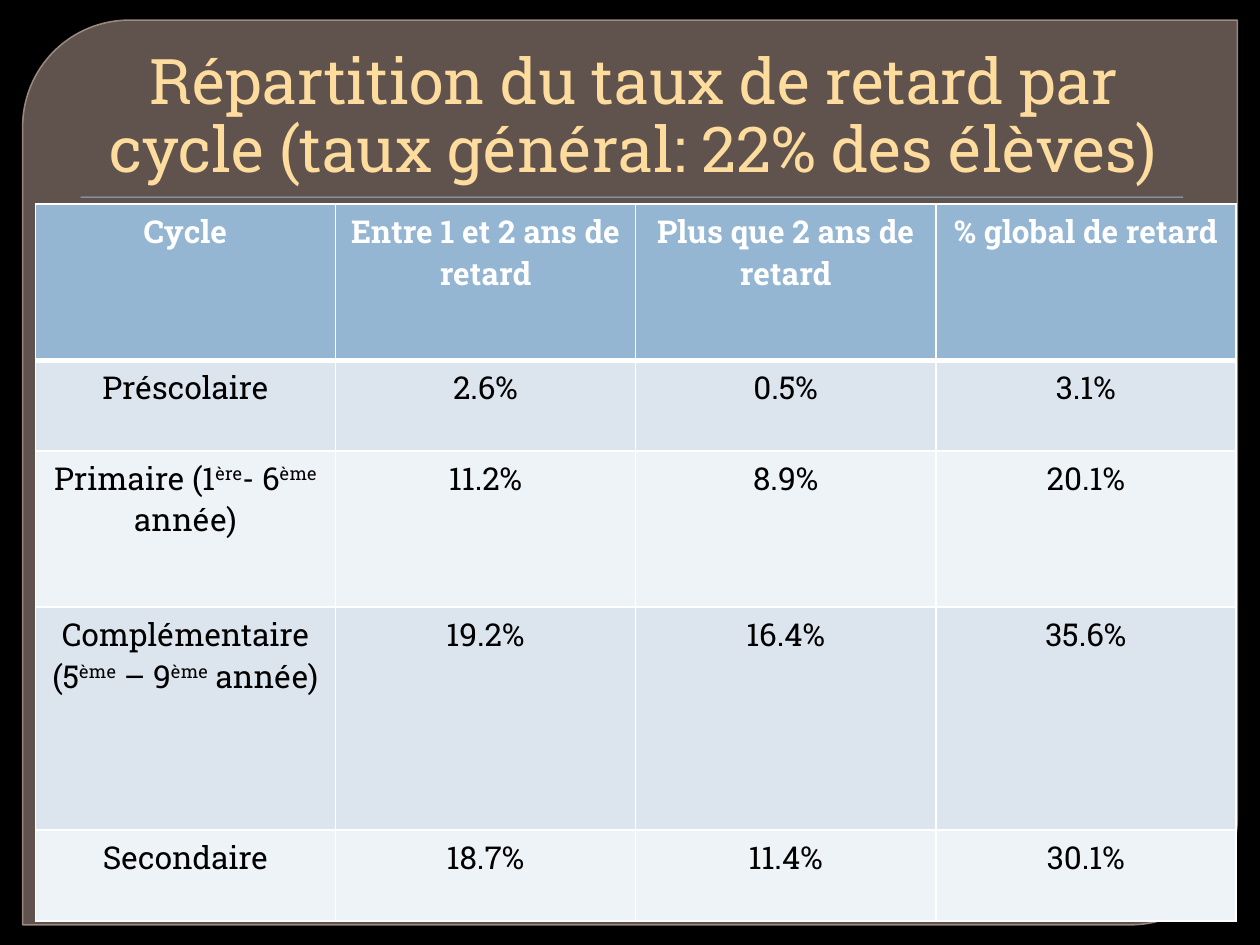
import pptx
import pptx.util
import pptx.dml.color
import pptx.enum.shapes
import pptx.enum.text
import pptx.oxml
import pptx.oxml.ns
import lxml.etree

WIDTH, HEIGHT = 10, 7.5
FONT = "Roboto Slab"
CENTER = pptx.enum.text.PP_ALIGN.CENTER
SHAPES = pptx.enum.shapes.MSO_SHAPE
HEADER_FILL, BAND_FILLS = "94B6D2", ("DCE5EE", "EEF3F7")
ROW_HEIGHTS = (1.24, 0.72, 1.24, 1.77, 0.72)
ROWS = (
    ("Cycle", "Entre 1 et 2 ans de retard", "Plus que 2 ans de retard", "% global de retard"),
    ("Préscolaire", "2.6%", "0.5%", "3.1%"),
    ("Primaire (1^ère^- 6^ème^ année)", "11.2%", "8.9%", "20.1%"),
    ("Complémentaire (5^ème^ – 9^ème^ année)", "19.2%", "16.4%", "35.6%"),
    ("Secondaire", "18.7%", "11.4%", "30.1%"),
)


def color(value):
    return pptx.dml.color.RGBColor.from_string(value)


def inches(box):
    return [pptx.util.Inches(length) for length in box]


def paint(target, value):
    target.fill.solid()
    target.fill.fore_color.rgb = color(value)


def set_alpha(fill_parent, percent):
    hue = fill_parent.find(".//" + pptx.oxml.ns.qn("a:srgbClr"))
    alpha = lxml.etree.SubElement(hue, pptx.oxml.ns.qn("a:alpha"))
    alpha.set("val", str(percent * 1000))


def add_plate(page, shape_type, box, value):
    plate = page.shapes.add_shape(shape_type, *inches(box))
    paint(plate, value)
    plate.line.fill.background()
    plate.shadow.inherit = False
    return plate


def add_frame(page, box):
    panel = add_plate(page, SHAPES.ROUND_2_DIAG_RECTANGLE, box, "948079")
    panel.adjustments[0], panel.adjustments[1] = 0.118, 0
    set_alpha(panel._element.spPr.find(pptx.oxml.ns.qn("a:solidFill")), 65)
    panel.line.color.rgb = color("A9948D")
    panel.line.width = pptx.util.Pt(0.87)
    set_alpha(panel._element.spPr.find(pptx.oxml.ns.qn("a:ln")), 88)


def add_rule(page, box):
    add_plate(page, SHAPES.RECTANGLE, box, HEADER_FILL)


def place_title(page, box, text):
    title = page.shapes.title
    title.left, title.top, title.width, title.height = inches(box)
    page.shapes._spTree.append(title._element)
    frame = title.text_frame
    frame.text = text
    frame.word_wrap = True
    frame.auto_size = pptx.enum.text.MSO_AUTO_SIZE.NONE
    frame.vertical_anchor = pptx.enum.text.MSO_ANCHOR.BOTTOM
    para = frame.paragraphs[0]
    para._p.get_or_add_pPr().set("marL", str(pptx.util.Inches(0.06)))
    para.alignment = CENTER
    para.line_spacing = 0.9
    style_font(para, 36, "FDDC9E", False)


def style_font(para, size, value, bold):
    para.font.name = FONT
    para.font.size = pptx.util.Pt(size)
    para.font.bold = bold
    para.font.color.rgb = color(value)


def set_borders(cell, widths):
    properties = cell._tc.get_or_add_tcPr()
    for position, (side, width) in enumerate(widths.items()):
        border = pptx.oxml.parse_xml(
            f'<a:ln{side} {pptx.oxml.ns.nsdecls("a")} w="{pptx.util.Pt(width)}">'
            '<a:solidFill><a:srgbClr val="FFFFFF"/></a:solidFill>'
            f'</a:ln{side}>'
        )
        properties.insert(position, border)


def fill_cell(cell, text, row):
    header = row == 0
    paint(cell, HEADER_FILL if header else BAND_FILLS[(row - 1) % 2])
    set_borders(cell, {"L": 1, "R": 1, "T": 3 if row == 1 else 1, "B": 3 if header else 1})
    para = cell.text_frame.paragraphs[0]
    para.alignment = CENTER
    style_font(para, 18, "FFFFFF" if header else "000000", header)
    for index, part in enumerate(text.split("^")):
        span = para.add_run()
        span.text = part
        if index % 2:
            span._r.get_or_add_rPr().set("baseline", "30000")


def add_rates_table(page, box):
    table = page.shapes.add_table(len(ROWS), len(ROWS[0]), *inches(box)).table
    for row, (height, texts) in enumerate(zip(ROW_HEIGHTS, ROWS)):
        table.rows[row].height = pptx.util.Inches(height)
        for column, text in enumerate(texts):
            fill_cell(table.cell(row, column), text, row)


def main():
    deck = pptx.Presentation()
    deck.slide_width, deck.slide_height = inches((WIDTH, HEIGHT))
    page = deck.slides.add_slide(deck.slide_layouts[5])
    paint(page.background, "000000")
    add_frame(page, (0.18, 0.16, 9.64, 7.18))
    add_rule(page, (0.64, 1.56, 8.75, 0.01))
    place_title(page, (0.05 * WIDTH, 0.28, 0.9 * WIDTH, 1.25),
                "Répartition du taux de retard par cycle (taux général: 22% des élèves)")
    add_rates_table(page, (0.28, 1.62, 9.53, sum(ROW_HEIGHTS)))
    deck.save("out.pptx")


if __name__ == "__main__":
    main()
